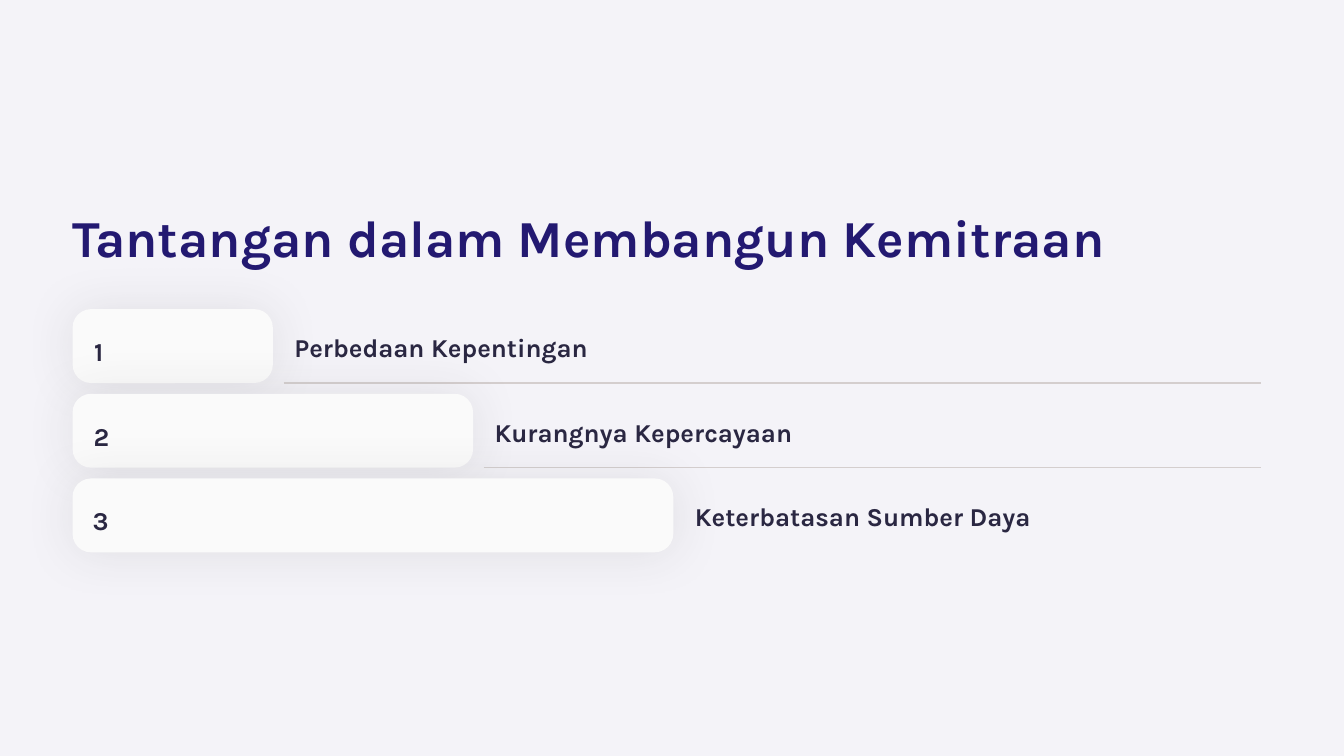
import pptx
import pptx.dml.color
import pptx.enum.shapes
import pptx.enum.text
import pptx.oxml
import pptx.oxml.ns
import pptx.util
from pptx.util import Inches

# Content
HEADING = "Tantangan dalam Membangun Kemitraan"
CHALLENGES = [  # label, label width, number width
    ("Perbedaan Kepentingan", 2.05, 0.07),
    ("Kurangnya Kepercayaan", 2.06, 0.11),
    ("Keterbatasan Sumber Daya", 2.32, 0.10),
]

COLORS = {"background": "F4F3F8", "heading": "231971", "text": "2A2742",
          "card": "FAFAFA", "divider": "D4CECE", "shadow": "333333"}
FONT = "Karla"

# Layout in inches
SLIDE_WIDTH = 10
SLIDE_HEIGHT = SLIDE_WIDTH * 9 / 16
LEFT, RIGHT = 0.54, 9.38
FIRST_TOP, ROW_PITCH = 2.3, 0.63
CARD_STEP, CARD_HEIGHT = 1.49, 0.55
INSET, DIVIDER_GAP = 0.16, 0.08


def rgb(name):
    return pptx.dml.color.RGBColor.from_string(COLORS[name])


def write(box, words, size, color, spacing, centred=False):
    frame = box.text_frame
    frame.margin_left = frame.margin_right = 0
    frame.margin_top = frame.margin_bottom = 0
    frame.word_wrap = False
    frame.auto_size = pptx.enum.text.MSO_AUTO_SIZE.NONE
    frame.vertical_anchor = pptx.enum.text.MSO_ANCHOR.TOP
    paragraph = frame.paragraphs[0]
    align = pptx.enum.text.PP_ALIGN
    paragraph.alignment = align.CENTER if centred else align.LEFT
    paragraph.line_spacing = pptx.util.Pt(spacing)
    run = paragraph.add_run()
    run.text = words
    run.font.name = FONT
    run.font.size = pptx.util.Pt(size)
    run.font.bold = True
    run.font.color.rgb = rgb(color)


def set_effects(shape, effects=""):
    shape._element.spPr.append(pptx.oxml.parse_xml(
        f'<a:effectLst {pptx.oxml.ns.nsdecls("a")}>{effects}</a:effectLst>'))


def add_card(slide, top, width):
    card = slide.shapes.add_shape(
        pptx.enum.shapes.MSO_SHAPE.ROUNDED_RECTANGLE,
        Inches(LEFT), Inches(top), Inches(width), Inches(CARD_HEIGHT))
    card.adjustments[0] = 0.25
    card.fill.solid()
    card.fill.fore_color.rgb = rgb("card")
    card.line.fill.background()
    set_effects(card, f'<a:outerShdw blurRad="{pptx.util.Pt(26.7)}" dist="0" dir="0">'
                      f'<a:srgbClr val="{COLORS["shadow"]}"><a:alpha val="10000"/>'
                      '</a:srgbClr></a:outerShdw>')


def add_divider(slide, left, y):
    divider = slide.shapes.add_connector(
        pptx.enum.shapes.MSO_CONNECTOR.STRAIGHT,
        Inches(left), Inches(y), Inches(RIGHT), Inches(y))
    divider.line.color.rgb = rgb("divider")
    divider.line.width = pptx.util.Pt(0.75)
    set_effects(divider)


def main():
    deck = pptx.Presentation()
    deck.slide_width, deck.slide_height = Inches(SLIDE_WIDTH), Inches(SLIDE_HEIGHT)
    slide = deck.slides.add_slide(deck.slide_layouts[5])
    slide.background.fill.solid()
    slide.background.fill.fore_color.rgb = rgb("background")

    # Heading, wide enough for one line
    heading = slide.shapes.title
    heading.left, heading.top = Inches(LEFT), Inches(1.51)
    heading.width, heading.height = Inches(7.8), Inches(0.48)
    write(heading, HEADING, 27.8, "heading", 34.7)

    # Steps: each card is one step wider than the one above
    for number, (label, label_width, number_width) in enumerate(CHALLENGES, 1):
        top = FIRST_TOP + (number - 1) * ROW_PITCH
        card_width = number * CARD_STEP
        card_right = LEFT + card_width
        add_card(slide, top, card_width)

        number_box = slide.shapes.add_textbox(
            Inches(LEFT + INSET), Inches(top + 0.12), Inches(number_width), Inches(0.31))
        write(number_box, str(number), 13.8, "text", 22.2, centred=True)

        label_box = slide.shapes.add_textbox(
            Inches(card_right + INSET), Inches(top + 0.16),
            Inches(label_width), Inches(0.24))
        write(label_box, label, 13.8, "text", 17.2)

        if number < len(CHALLENGES):
            add_divider(slide, card_right + DIVIDER_GAP, top + CARD_HEIGHT)

    deck.save("out.pptx")


if __name__ == "__main__":
    main()
